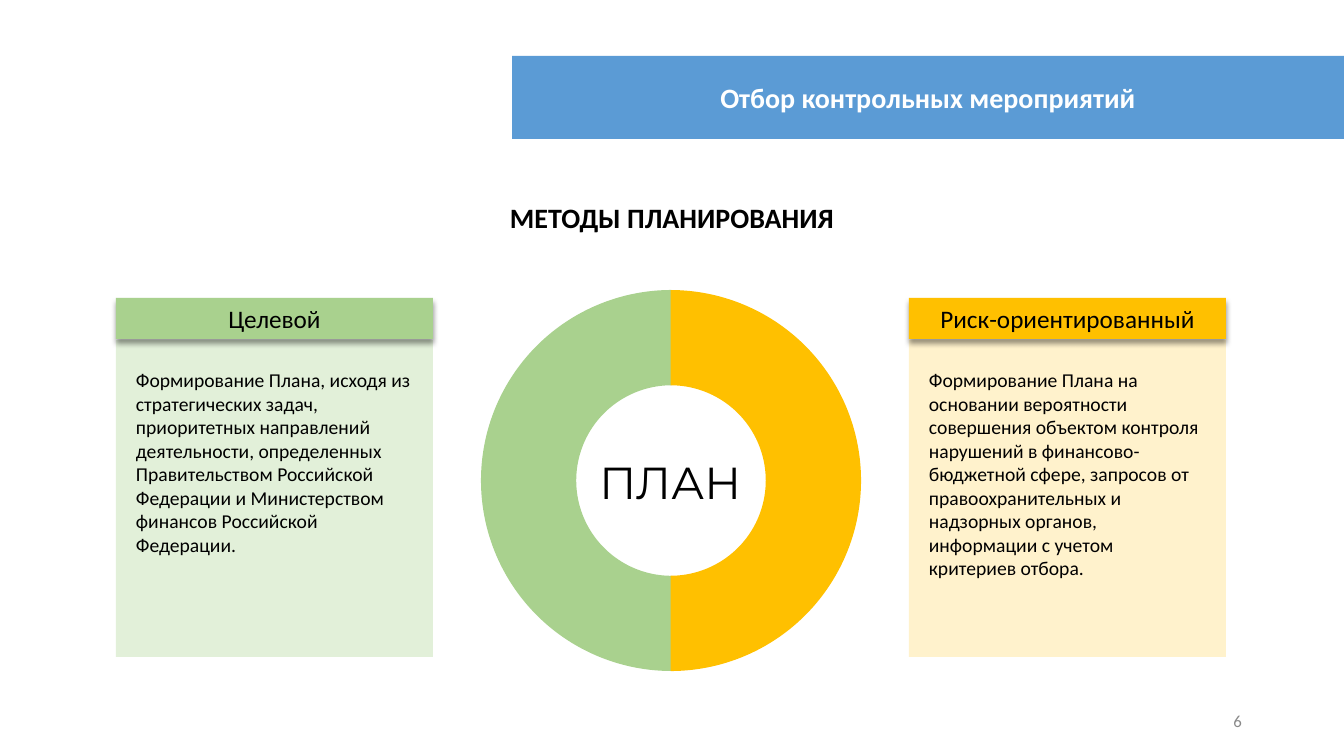
from lxml import etree
from pptx import Presentation
from pptx.dml.color import RGBColor
from pptx.enum.shapes import MSO_SHAPE
from pptx.enum.text import MSO_ANCHOR, MSO_AUTO_SIZE, PP_ALIGN
from pptx.oxml import parse_xml
from pptx.oxml.ns import nsdecls
from pptx.util import Pt

RECT, ARC = MSO_SHAPE.RECTANGLE, MSO_SHAPE.BLOCK_ARC
LEFT, CENTER, RIGHT = PP_ALIGN.LEFT, PP_ALIGN.CENTER, PP_ALIGN.RIGHT
TOP, MIDDLE = MSO_ANCHOR.TOP, MSO_ANCHOR.MIDDLE

TITLE = "Отбор контрольных мероприятий"
SUBTITLE = "МЕТОДЫ ПЛАНИРОВАНИЯ"
CENTER_WORD = "ПЛАН"
PAGE_NUMBER = "6"
METHODS = [
    {
        "name": "Целевой",
        "about": "Формирование Плана, исходя из стратегических задач, приоритетных "
                 "направлений деятельности, определенных Правительством Российской "
                 "Федерации и Министерством финансов Российской Федерации.",
        "strong": "A9D18E", "pale": "E2F0D9",
        "card_left": 116, "arc_left": 481, "arc_turn": 270,
    },
    {
        "name": "Риск-ориентированный",
        "about": "Формирование Плана на основании вероятности совершения объектом "
                 "контроля нарушений в финансово-бюджетной сфере, запросов от "
                 "правоохранительных и надзорных органов, информации с учетом "
                 "критериев отбора.",
        "strong": "FFC000", "pale": "FFF2CC",
        "card_left": 909, "arc_left": 480, "arc_turn": 90,
    },
]

# Lengths in px
SLIDE_W, SLIDE_H = 1344, 756
TITLE_BOX = (512, 56, 832, 83)
SUBTITLE_BOX = (355, 196, 634, 44)
CENTER_BOX = (577, 450, 187, 64)
PAGE_BOX = (950, 701, 302, 40)
CARD_W = 317
HEADER_TOP, HEADER_H = 298, 41
BODY_TOP, BODY_H = 340, 317
ABOUT_INDENT, ABOUT_TOP, ABOUT_W, ABOUT_H = 10, 363, 296, 212
ARC_TOP, ARC_SIZE = 290, 381
EMU_PER_PX = 914400 / 100.8

SHADOW = (
    f'<a:effectLst {nsdecls("a")}>'
    '<a:outerShdw blurRad="50800" dist="38100" dir="5400000" algn="t" rotWithShape="0">'
    '<a:srgbClr val="000000"><a:alpha val="40000"/></a:srgbClr>'
    '</a:outerShdw></a:effectLst>'
)


def px(length):
    return round(length * EMU_PER_PX)


def color(hex_string):
    return RGBColor.from_string(hex_string)


def place(shape, box):
    for side, length in zip(("left", "top", "width", "height"), box):
        setattr(shape, side, px(length))


def fill(shape, hex_string):
    shape.fill.solid()
    shape.fill.fore_color.rgb = color(hex_string)


def write(shape, text, size, align=CENTER, anchor=MIDDLE, ink="000000", **font_format):
    frame = shape.text_frame
    frame.text = text
    frame.word_wrap = True
    frame.auto_size = MSO_AUTO_SIZE.NONE
    frame.vertical_anchor = anchor
    paragraph = frame.paragraphs[0]
    paragraph.alignment = align
    font = paragraph.runs[0].font
    font.color.rgb = color(ink)
    for key, value in {"name": "Calibri", "size": Pt(size), **font_format}.items():
        setattr(font, key, value)


def add_block(slide, preset, box, hex_string):
    block = slide.shapes.add_shape(preset, *map(px, box))
    block.shadow.inherit = False
    fill(block, hex_string)
    block.line.fill.background()
    return block


def add_label(slide, box, text, size, **text_format):
    label = slide.shapes.add_textbox(*map(px, box))
    write(label, text, size, **text_format)


def cast_shadow(shape):
    """Replace the empty effect list with a soft shadow below the shape."""
    properties = shape.fill._xPr
    for effects in properties.findall(etree.QName(parse_xml(SHADOW)).text):
        properties.remove(effects)
    properties.append(parse_xml(SHADOW))


def add_method(slide, method):
    left = method["card_left"]
    add_block(slide, RECT, (left, BODY_TOP, CARD_W, BODY_H), method["pale"])
    header = add_block(slide, RECT, (left, HEADER_TOP, CARD_W, HEADER_H), method["strong"])
    cast_shadow(header)
    write(header, method["name"], 18)
    about_box = (left + ABOUT_INDENT, ABOUT_TOP, ABOUT_W, ABOUT_H)
    add_label(slide, about_box, method["about"], 14, align=LEFT, anchor=TOP)
    arc_box = (method["arc_left"], ARC_TOP, ARC_SIZE, ARC_SIZE)
    arc = add_block(slide, ARC, arc_box, method["strong"])
    arc.rotation = method["arc_turn"]


def main():
    deck = Presentation()
    deck.slide_width, deck.slide_height = px(SLIDE_W), px(SLIDE_H)
    slide = deck.slides.add_slide(deck.slide_layouts[5])

    title = slide.shapes.title
    place(title, TITLE_BOX)
    fill(title, "5B9BD5")
    write(title, TITLE, 20, ink="FFFFFF", bold=True)

    add_label(slide, SUBTITLE_BOX, SUBTITLE, 20, anchor=TOP, bold=True)
    for method in METHODS:
        add_method(slide, method)
    add_label(slide, CENTER_BOX, CENTER_WORD, 32, anchor=TOP, name="Montserrat")
    add_label(slide, PAGE_BOX, PAGE_NUMBER, 12, align=RIGHT, ink="898989")
    deck.save("out.pptx")


if __name__ == "__main__":
    main()
